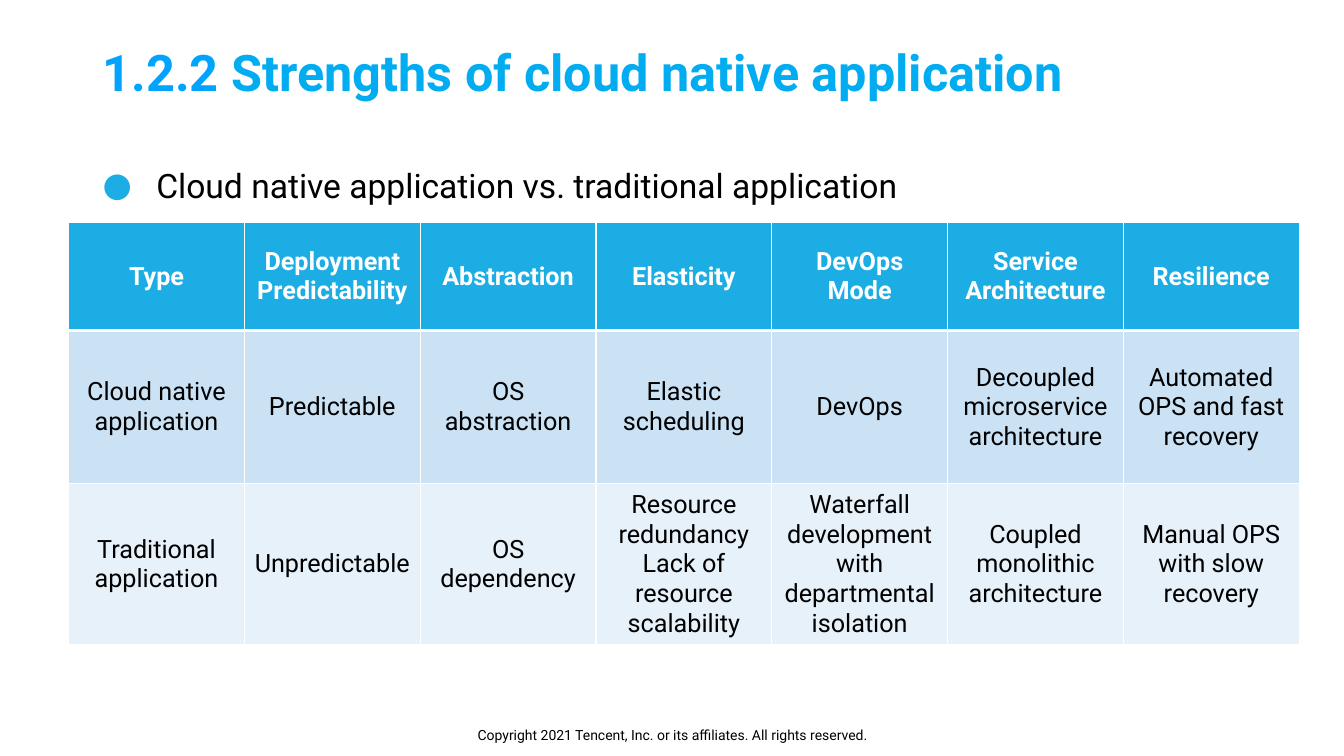
from dataclasses import dataclass

from lxml.etree import SubElement
from pptx import Presentation
from pptx.dml.color import RGBColor
from pptx.enum.text import MSO_ANCHOR as Anchor, PP_ALIGN as Align
from pptx.oxml.ns import qn
from pptx.util import Cm, Pt

FONT = "Roboto"
WHITE, BLACK, ACCENT = "FFFFFF", "000000", "1CADE4"


@dataclass
class Run:
    text: str
    size: float
    color: str = BLACK
    bold: bool = False


@dataclass
class TextBox:
    left: float
    top: float
    width: float
    height: float
    runs: list[Run]
    anchor: Anchor = Anchor.MIDDLE
    align: Align = Align.LEFT
    spacing: float = 1.0
    indent: float = 0
    bullet: str = ""


@dataclass
class RowStyle:
    height: float
    fill: str
    color: str = BLACK
    bold: bool = False
    rule_above: float = 1
    rule_below: float = 1


def rgb(color: str) -> RGBColor:
    return RGBColor.from_string(color)


def add_run(p, run: Run) -> None:
    r = p.add_run()
    r.text = run.text
    font = {"name": FONT, "size": Pt(run.size), "bold": run.bold}
    for name, value in font.items():
        setattr(r.font, name, value)
    r.font.color.rgb = rgb(run.color)


def add_bullet(p, char: str, color: str) -> None:
    pPr = p._p.get_or_add_pPr()
    clr = SubElement(pPr, qn("a:buClr"))
    SubElement(clr, qn("a:srgbClr"), val=color)
    SubElement(pPr, qn("a:buFont"), typeface=FONT)
    SubElement(pPr, qn("a:buChar"), char=char)


def add_text(s, box: TextBox) -> None:
    sp = s.shapes.add_textbox(Cm(box.left), Cm(box.top), Cm(box.width), Cm(box.height))
    tf = sp.text_frame
    for name, value in {"word_wrap": True, "vertical_anchor": box.anchor}.items():
        setattr(tf, name, value)
    p = tf.paragraphs[0]
    if box.bullet:
        add_bullet(p, box.bullet, ACCENT)
    for name, value in {"alignment": box.align, "line_spacing": box.spacing}.items():
        setattr(p, name, value)
    if box.indent:
        pPr = p._p.get_or_add_pPr()
        pPr.set("marL", str(Cm(box.indent)))
        pPr.set("indent", str(-Cm(box.indent)))
    for run in box.runs:
        add_run(p, run)


def add_borders(cell, style: RowStyle) -> None:
    tcPr = cell._tc.get_or_add_tcPr()
    widths = {"L": 1, "R": 1, "T": style.rule_above, "B": style.rule_below}
    for side, width in widths.items():
        ln = SubElement(tcPr, qn(f"a:ln{side}"), w=str(Pt(width)))
        fill = SubElement(ln, qn("a:solidFill"))
        SubElement(fill, qn("a:srgbClr"), val=WHITE)


def fill_cell(cell, text: str, style: RowStyle) -> None:
    add_borders(cell, style)
    cell.fill.solid()
    cell.fill.fore_color.rgb = rgb(style.fill)
    cell.vertical_anchor = Anchor.MIDDLE
    tf = cell.text_frame
    for i, line in enumerate(text.split("\n")):
        p = tf.add_paragraph() if i else tf.paragraphs[0]
        p.alignment = Align.CENTER
        add_run(p, Run(line, 18, style.color, style.bold))


def add_comparison(s, left: float, top: float, col_width: float,
                   rows: list[list[str]], styles: list[RowStyle]) -> None:
    n_cols = len(rows[0])
    height = sum(style.height for style in styles)
    table = s.shapes.add_table(len(rows), n_cols, Cm(left), Cm(top),
                               Cm(col_width * n_cols), Cm(height)).table
    for col in table.columns:
        col.width = Cm(col_width)
    for row, texts, style in zip(table.rows, rows, styles):
        row.height = Cm(style.height)
        for cell, text in zip(row.cells, texts):
            fill_cell(cell, text, style)


# Content
TEXTS = [
    TextBox(10.34, 18.01, 13.21, 1.02,
            [Run("Copyright 2021 Tencent, Inc. or its affiliates. All rights reserved.", 10)],
            align=Align.CENTER),
    TextBox(2.34, 0.64, 27.28, 2.51,
            [Run("1.2.2 ", 36, "00A4FF", True),
             Run("Strengths of cloud native application", 36, "01ACF1", True)],
            spacing=0.9, indent=2.54),
    TextBox(2.34, 3.53, 29.62, 14,
            [Run("Cloud native application vs. traditional application", 24)],
            anchor=Anchor.TOP, spacing=1.5, indent=1.35, bullet="●"),
]
ROWS = [
    ["Type", "Deployment Predictability", "Abstraction", "Elasticity",
     "DevOps Mode", "Service Architecture", "Resilience"],
    ["Cloud native application", "Predictable", "OS abstraction", "Elastic scheduling",
     "DevOps", "Decoupled microservice architecture", "Automated OPS and fast recovery"],
    ["Traditional application", "Unpredictable", "OS dependency",
     "Resource redundancy\nLack of resource scalability",
     "Waterfall development with departmental isolation",
     "Coupled monolithic architecture", "Manual OPS with slow recovery"],
]
STYLES = [
    RowStyle(2.72, ACCENT, WHITE, True, rule_below=3),
    RowStyle(3.86, "CBE2F5", rule_above=3),
    RowStyle(4.06, "E7F1FA"),
]


def main() -> None:
    prs = Presentation()
    prs.slide_width, prs.slide_height = Cm(33.87), Cm(19.05)
    s = prs.slides.add_slide(prs.slide_layouts[6])

    # Footer, title and lead line
    for box in TEXTS:
        add_text(s, box)

    # Comparison table
    add_comparison(s, 1.73, 5.61, 4.43, ROWS, STYLES)

    prs.save("out.pptx")


if __name__ == "__main__":
    main()
